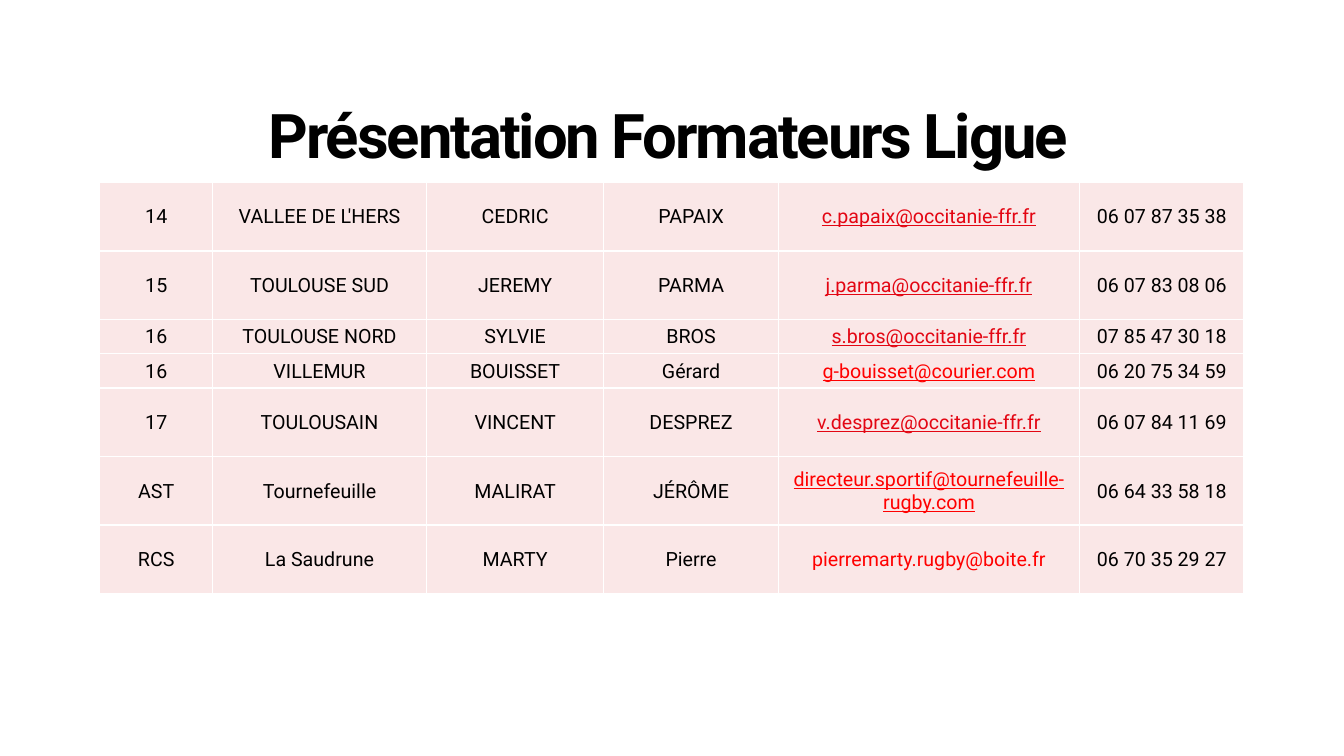
from lxml import etree
from pptx import Presentation
from pptx import util as u
from pptx.dml.color import RGBColor
from pptx.enum import text
from pptx.oxml.ns import qn

# Content: number, sector, two name columns, e-mail, phone
TITLE = "Présentation Formateurs Ligue"
TRAINERS = [
    ("14", "VALLEE DE L'HERS", "CEDRIC", "PAPAIX", "c.papaix@occitanie-ffr.fr", "06 07 87 35 38"),
    ("15", "TOULOUSE SUD", "JEREMY", "PARMA", "j.parma@occitanie-ffr.fr", "06 07 83 08 06"),
    ("16", "TOULOUSE NORD", "SYLVIE", "BROS", "s.bros@occitanie-ffr.fr", "07 85 47 30 18"),
    ("16", "VILLEMUR", "BOUISSET", "Gérard", "g-bouisset@courier.com", "06 20 75 34 59"),
    ("17", "TOULOUSAIN", "VINCENT", "DESPREZ", "v.desprez@occitanie-ffr.fr", "06 07 84 11 69"),
    ("AST", "Tournefeuille", "MALIRAT", "JÉRÔME", "directeur.sportif@tournefeuille-rugby.com",
     "06 64 33 58 18"),
    ("RCS", "La Saudrune", "MARTY", "Pierre", "pierremarty.rugby@boite.fr", "06 70 35 29 27"),
]
EMAIL_COLUMN = 4
SINGLE_ROWS = {2, 3}
LAST_ROW = len(TRAINERS) - 1

# Grid and colours
COLUMNS = [1.12, 2.12, 1.76, 1.73, 2.99, 1.63]
ROW = 0.34
HEIGHTS = [ROW if i in SINGLE_ROWS else 2 * ROW for i in range(len(TRAINERS))]
BLACK, WHITE, PINK = "000000", "FFFFFF", "FAE7E7"
LEAGUE_RED, RED = "E30613", "FF0000"


def color(value):
    return RGBColor.from_string(value)


def write(frame, words, size=14, fill=BLACK, bold=False, underline=False, tracking=0, spacing=None):
    para = frame.paragraphs[0]
    para.alignment = text.PP_ALIGN.CENTER
    para.line_spacing = spacing
    span = para.add_run()
    span.text = words
    font = span.font
    font.name, font.size, font.bold, font.underline = "Roboto", u.Pt(size), bold, underline
    font.color.rgb = color(fill)
    if tracking:
        font._element.set("spc", str(int(tracking * 100)))


def style_cell(cell):
    cell.vertical_anchor = text.MSO_ANCHOR.MIDDLE
    cell.margin_left = cell.margin_right = cell.margin_top = u.Inches(0.01)
    cell.margin_bottom = 0
    props = cell._tc.get_or_add_tcPr()
    for side in ("lnL", "lnR", "lnT", "lnB"):
        line = etree.SubElement(props, qn("a:" + side), w=str(u.Pt(1)))
        paint = etree.SubElement(line, qn("a:solidFill"))
        etree.SubElement(paint, qn("a:srgbClr"), val=WHITE)
    cell.fill.solid()
    cell.fill.fore_color.rgb = color(PINK)


def email_format(row, address):
    tint = LEAGUE_RED if address.endswith("occitanie-ffr.fr") else RED
    return {"fill": tint, "underline": row != LAST_ROW}


deck = Presentation()
deck.slide_width, deck.slide_height = u.Inches(13.33), u.Inches(7.5)
page = deck.slides.add_slide(deck.slide_layouts[6])

# Trainer table
table = page.shapes.add_table(
    len(TRAINERS), len(COLUMNS), u.Inches(0.99), u.Inches(1.81),
    u.Inches(sum(COLUMNS)), u.Inches(sum(HEIGHTS))).table
table.first_row = table.horz_banding = False
for column, width in zip(table.columns, COLUMNS):
    column.width = u.Inches(width)
for r, trainer in enumerate(TRAINERS):
    table.rows[r].height = u.Inches(HEIGHTS[r])
    for c, words in enumerate(trainer):
        cell = table.cell(r, c)
        style_cell(cell)
        write(cell.text_frame, words, **(email_format(r, words) if c == EMAIL_COLUMN else {}))

# Title
box = page.shapes.add_textbox(u.Inches(2.13), u.Inches(1.07), u.Inches(9), u.Inches(0.65))
box.text_frame.word_wrap = True
box.text_frame.vertical_anchor = text.MSO_ANCHOR.BOTTOM
write(box.text_frame, TITLE, size=44, bold=True, tracking=-1.5, spacing=0.7)

deck.save("out.pptx")
